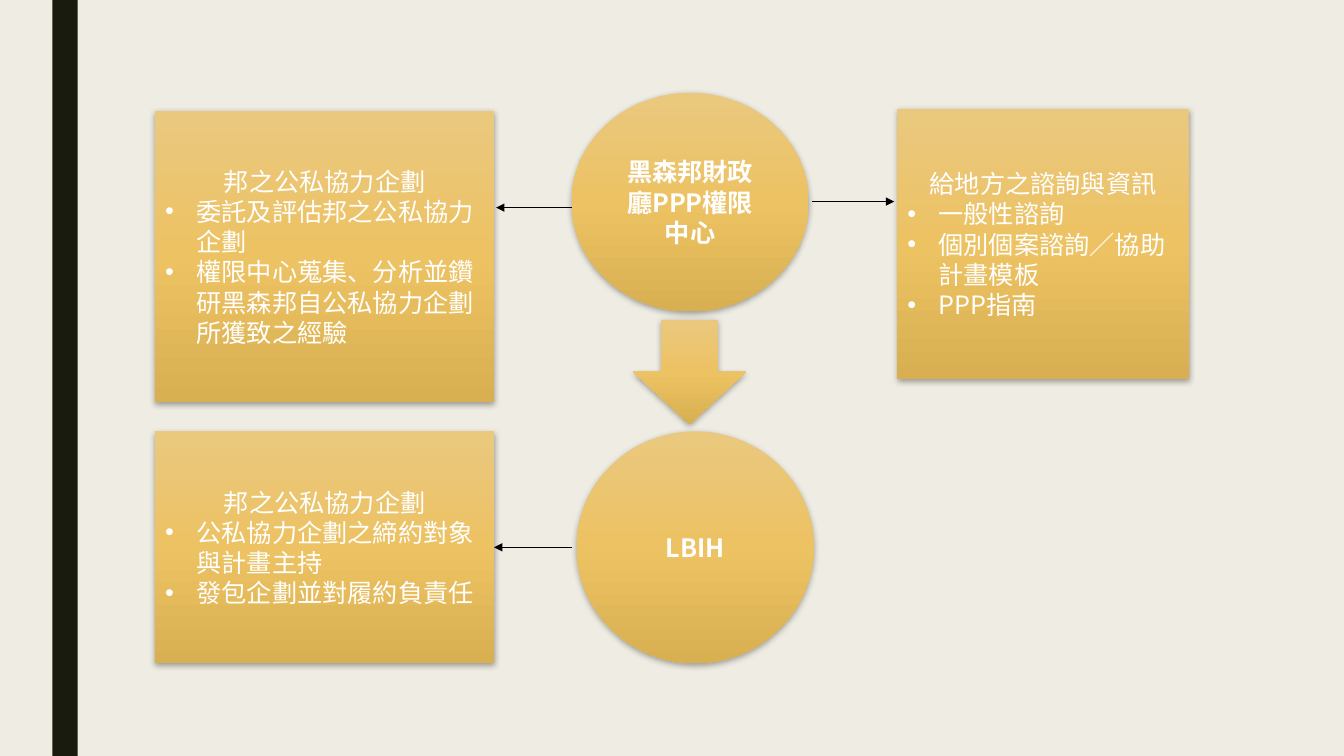
"""Build a slide on the roles of the PPP competence centre and LBIH."""
from lxml import etree
from pptx import Presentation
from pptx.dml.color import RGBColor
from pptx.enum.shapes import MSO_CONNECTOR, MSO_SHAPE
from pptx.enum.text import MSO_ANCHOR, PP_ALIGN
from pptx.oxml.ns import qn
from pptx.util import Inches, Pt

RECT, OVAL, DOWN = MSO_SHAPE.RECTANGLE, MSO_SHAPE.OVAL, MSO_SHAPE.DOWN_ARROW
LINE = MSO_CONNECTOR.STRAIGHT
CENTER, LEFT = PP_ALIGN.CENTER, PP_ALIGN.LEFT
MIDDLE = MSO_ANCHOR.MIDDLE
RIGHT_SIDE = 3

COLORS = {"back": "EFEDE3", "bar": "191B0E", "text": "FFFFFF", "line": "000000",
          "top": "EAC87E", "mid": "ECC263", "low": "D9B051"}
STOPS = (("top", 0), ("mid", 50), ("low", 100))


def rgb(name):
    return RGBColor.from_string(COLORS[name])


def add_node(parent, tag, **attrs):
    node = etree.SubElement(parent, qn(tag))
    for key, value in attrs.items():
        node.set(key, str(value))
    return node


class Chart:
    font, size, indent = "Noto Sans CJK SC", 18, 0.31

    def __init__(self, slide):
        self.slide = slide
        slide.background.fill.solid()
        slide.background.fill.fore_color.rgb = rgb("back")

    def shape(self, kind, box):
        shape = self.slide.shapes.add_shape(kind, *map(Inches, box))
        shape.shadow.inherit = False
        shape.line.fill.background()
        return shape

    def bar(self, box):
        fill = self.shape(RECT, box).fill
        fill.solid()
        fill.fore_color.rgb = rgb("bar")

    def gold(self, kind, box):
        shape = self.shape(kind, box)
        shape.fill.gradient()
        shape.fill.gradient_angle = 270
        props = shape._element.spPr
        stops = props.find(".//" + qn("a:gsLst"))
        for stop in list(stops):
            stops.remove(stop)
        for name, place in STOPS:
            stop = add_node(stops, "a:gs", pos=place * 1000)
            add_node(stop, "a:srgbClr", val=COLORS[name])
        shade = add_node(props.find(qn("a:effectLst")), "a:outerShdw",
                         blurRad=Pt(4.5), dist=Pt(1.5), dir=90 * 60000,
                         algn="ctr", rotWithShape=0)
        color = add_node(shade, "a:srgbClr", val=COLORS["line"])
        add_node(color, "a:alpha", val=35000)
        return shape

    def text(self, para, words, bold=False):
        run = para.add_run()
        run.text = words
        font = run.font
        font.name, font.size, font.bold = self.font, Pt(self.size), bold
        font.color.rgb = rgb("text")
        add_node(run._r.get_or_add_rPr(), "a:ea", typeface=self.font)

    def panel(self, kind, box, title, items=(), bold=False):
        shape = self.gold(kind, box)
        frame = shape.text_frame
        frame.word_wrap = True
        frame.vertical_anchor = MIDDLE
        head = frame.paragraphs[0]
        head.alignment = CENTER
        self.text(head, title, bold)
        for item in items:
            para = frame.add_paragraph()
            para.alignment = LEFT
            props = para._p.get_or_add_pPr()
            props.set("marL", str(Inches(self.indent)))
            props.set("indent", str(-Inches(self.indent)))
            add_node(props, "a:buFont", typeface="Arial")
            add_node(props, "a:buChar", char="•")
            self.text(para, item)
        return shape

    def arrow(self, start, end, y, target=None):
        line = self.slide.shapes.add_connector(
            LINE, Inches(start), Inches(y), Inches(end), Inches(y))
        if target is not None:
            line.end_connect(target, RIGHT_SIDE)
        line.line.color.rgb = rgb("line")
        line.line.width = Pt(0.5)
        props = line._element.spPr
        add_node(props.find(qn("a:ln")), "a:tailEnd", type="triangle")
        add_node(props, "a:effectLst")


def main():
    deck = Presentation()
    deck.slide_width, deck.slide_height = Inches(13.33), Inches(7.5)
    chart = Chart(deck.slides.add_slide(deck.slide_layouts[6]))
    chart.bar((0.52, 0, 0.25, 7.5))
    chart.arrow(5.67, 4.92, 2.06)
    chart.arrow(8.05, 8.87, 2)
    chart.gold(DOWN, (6.28, 3.17, 1.12, 1.04))
    chart.panel(OVAL, (5.67, 0.92, 2.35, 2.17), "黑森邦財政廳PPP權限中心", bold=True)
    chart.panel(RECT, (1.54, 1.1, 3.36, 2.89), "邦之公私協力企劃",
                ("委託及評估邦之公私協力企劃",
                 "權限中心蒐集、分析並鑽研黑森邦自公私協力企劃所獲致之經驗"))
    state = chart.panel(RECT, (1.54, 4.28, 3.36, 2.3), "邦之公私協力企劃",
                        ("公私協力企劃之締約對象與計畫主持", "發包企劃並對履約負責任"))
    chart.arrow(5.67, 4.9, 5.43, state)
    chart.panel(RECT, (8.9, 1.08, 2.89, 2.68), "給地方之諮詢與資訊",
                ("一般性諮詢", "個別個案諮詢／協助計畫模板", "PPP指南"))
    chart.panel(OVAL, (5.72, 4.28, 2.35, 2.3), "LBIH", bold=True)
    deck.save("out.pptx")


if __name__ == "__main__":
    main()
